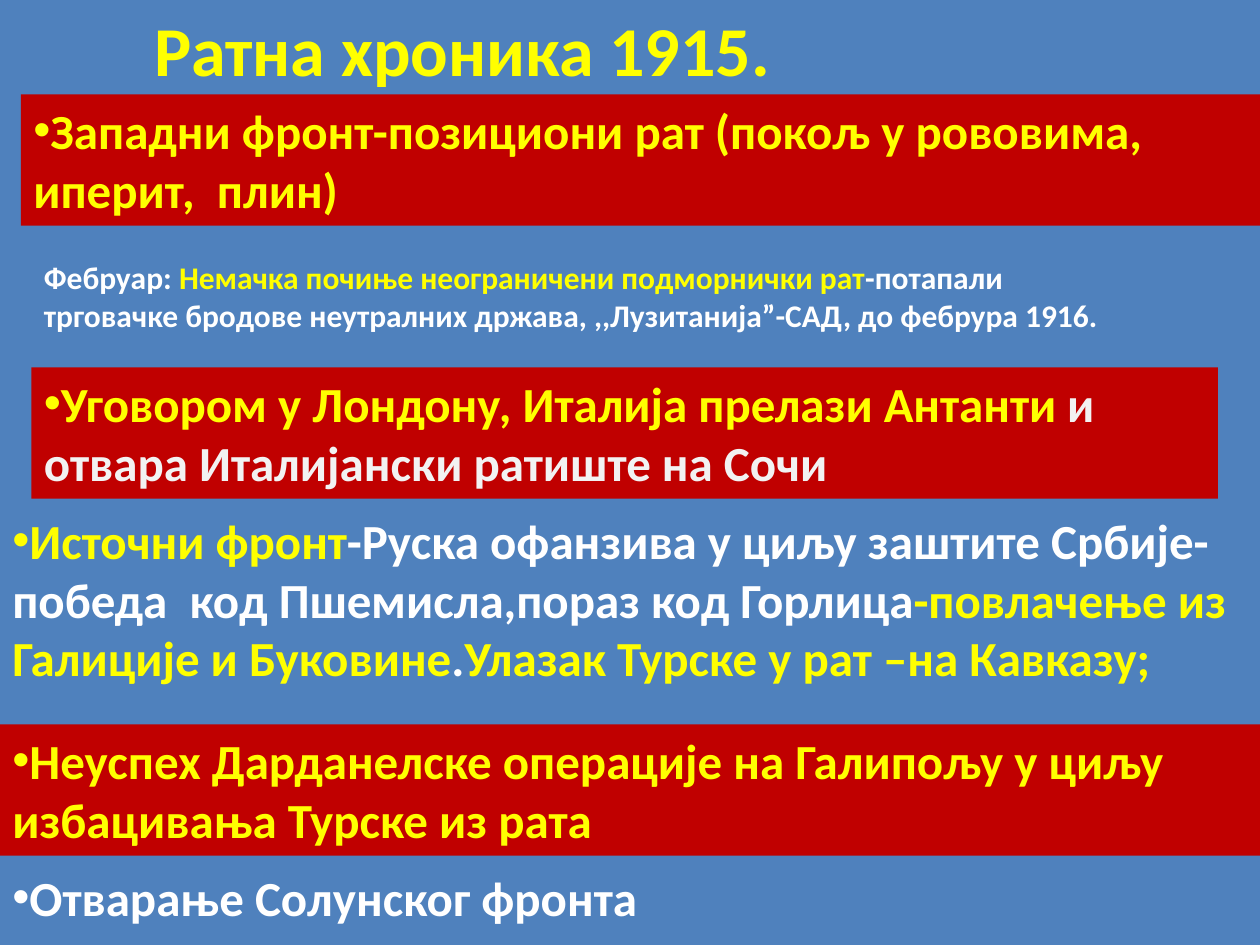
from lxml import etree
from pptx import Presentation
from pptx.dml.color import RGBColor
from pptx.enum.text import MSO_AUTO_SIZE, PP_ALIGN
from pptx.oxml.ns import qn
from pptx.util import Inches, Pt

GROW = MSO_AUTO_SIZE.SHAPE_TO_FIT_TEXT
CENTER = PP_ALIGN.CENTER
BLUE = RGBColor(0x4F, 0x81, 0xBD)
RED = RGBColor(0xC0, 0x00, 0x00)
YELLOW = RGBColor(0xFF, 0xFF, 0x00)
WHITE = RGBColor(0xFF, 0xFF, 0xFF)
PALE = RGBColor(0xF2, 0xF2, 0xF2)

deck = Presentation()
deck.slide_width, deck.slide_height = Inches(10), Inches(7.5)
slide = deck.slides.add_slide(deck.slide_layouts[6])
slide.background.fill.solid()
slide.background.fill.fore_color.rgb = BLUE

# Grid of 120 columns by 90 rows
COL = deck.slide_width / 120
ROW = deck.slide_height / 90


def add_box(place, parts, size=28, fill=None, bullet=True):
    """Add a bold text box; place is in grid units, parts are (text, colour)."""
    left, top, width, height = place
    box = slide.shapes.add_textbox(
        round(left * COL), round(top * ROW), round(width * COL), round(height * ROW))
    if fill:
        box.fill.solid()
        box.fill.fore_color.rgb = fill
    frame = box.text_frame
    frame.word_wrap = True
    frame.auto_size = GROW
    para = frame.paragraphs[0]
    if bullet:
        props = para._p.get_or_add_pPr()
        etree.SubElement(props, qn("a:buFont"), typeface="Arial")
        etree.SubElement(props, qn("a:buChar"), char="•")
    for text, color in parts:
        run = para.add_run()
        run.text = text
        run.font.name = "Calibri"
        run.font.size = Pt(size)
        run.font.bold = True
        run.font.color.rgb = color
    return para


title = add_box((0, 0, 88, 9.25), [("Ратна хроника 1915.", YELLOW)], 40, bullet=False)
title.alignment = CENTER
line = etree.Element(qn("a:ln"), w=str(Pt(1.45)))
paint = etree.SubElement(line, qn("a:solidFill"))
etree.SubElement(paint, qn("a:srgbClr"), val=str(WHITE))
title.runs[0].font._element.insert(0, line)

add_box((2, 9, 120, 12.5), [
    ("Западни фронт-позициони рат (покољ у рововима, иперит,  плин)", YELLOW),
], fill=RED)
add_box((3, 35, 113, 12.5), [
    ("Уговором у Лондону, Италија прелази Антанти", YELLOW),
    (" и отвара Италијански ратиште на Сочи", PALE),
], fill=RED)
add_box((0, 48, 125, 18.1), [
    ("Источни фронт", YELLOW),
    ("-Руска офанзива у циљу заштите Србије-победа  код Пшемисла,"
     "пораз код Горлица", WHITE),
    ("-повлачење из Галиције и Буковине", YELLOW),
    (".", WHITE),
    ("Улазак Турске у рат –на Кавказу;", YELLOW),
])
add_box((0, 69, 120, 12.5), [
    ("Неуспех Дарданелске операције на Галипољу у циљу избацивања "
     "Турске из рата", YELLOW),
], fill=RED)
add_box((0, 82, 116, 6.8), [("Отварање Солунског фронта", WHITE)])
add_box((3, 24, 106, 8.5), [
    ("Фебруар: ", WHITE),
    ("Немачка почиње неограничени подморнички рат", YELLOW),
    ("-потапали трговачке бродове неутралних држава, "
     ",,Лузитанија”-САД, до фебрура 1916.", WHITE),
], 18, bullet=False)

deck.save("out.pptx")
